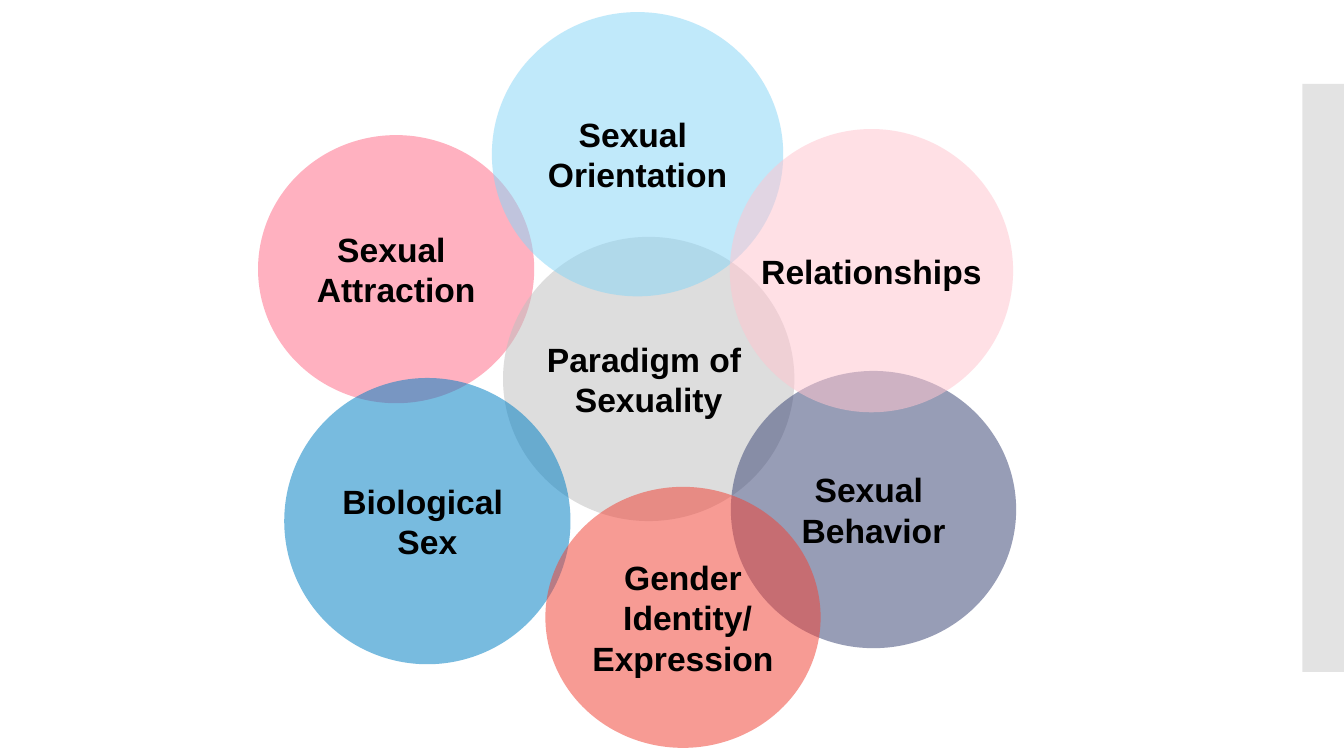
from lxml.etree import SubElement
from pptx import Presentation
from pptx.dml.color import RGBColor
from pptx.enum.shapes import MSO_SHAPE as Shape
from pptx.enum.text import MSO_ANCHOR as Anchor, PP_ALIGN as Align
from pptx.oxml.ns import qn
from pptx.util import Inches, Pt

COLORS = {
    "text": "000000",
    "edge": "C8C8C8",
    "attraction": "FF6D88",
    "paradigm": "BFBFBF",
    "biology": "007FC4",
    "orientation": "89D6F7",
    "behavior": "3C4676",
    "gender": "F04336",
    "relationships": "FFC5CF",
}

# Back to front: colour, (left, top, width, height) in percent of the slide, lines
CIRCLES = [
    ("attraction", (19.2, 17.87, 20.55, 35.47), ["Sexual ", "Attraction"]),
    ("paradigm", (37.43, 31.33, 21.68, 37.6), ["Paradigm of ", "Sexuality"]),
    ("biology", (21.15, 50, 21.3, 37.87), ["Biological ", "Sex"]),
    ("orientation", (36.6, 1.6, 21.68, 37.6), ["Sexual ", "Orientation"]),
    ("behavior", (54.38, 49.07, 21.23, 36.67), ["Sexual ", "Behavior"]),
    ("gender", (40.58, 64.4, 20.48, 34.53), ["Gender", " Identity/", "Expression"]),
    ("relationships", (54.3, 17.07, 21.08, 37.47), ["Relationships"]),
]


class Page:
    """Holds the text style and the current slide; lengths are percentages."""

    font_name = "Arial"
    font_size = Pt(24)

    def __init__(self, deck):
        self.slide = deck.slides.add_slide(deck.slide_layouts[6])
        self.width, self.height = deck.slide_width, deck.slide_height

    def panel(self, kind, area, color, opacity):
        left, top, width, height = area
        shape = self.slide.shapes.add_shape(
            kind,
            round(self.width * left / 100), round(self.height * top / 100),
            round(self.width * width / 100), round(self.height * height / 100))
        shape.shadow.inherit = False
        shape.line.fill.background()
        shape.fill.solid()
        shape.fill.fore_color.rgb = RGBColor.from_string(COLORS[color])
        # Transparency
        tint = shape.element.spPr.find(qn("a:solidFill"))[0]
        SubElement(tint, qn("a:alpha")).set("val", str(opacity * 1000))
        return shape

    def circle(self, color, area, lines):
        frame = self.panel(Shape.OVAL, area, color, opacity=53).text_frame
        frame.word_wrap = False
        frame.vertical_anchor = Anchor.MIDDLE
        frame.text = "\n".join(lines)
        for para in frame.paragraphs:
            para.alignment = Align.CENTER
            para.font.name = self.font_name
            para.font.size = self.font_size
            para.font.bold = True
            para.font.color.rgb = RGBColor.from_string(COLORS["text"])


def main():
    deck = Presentation()
    deck.slide_width, deck.slide_height = Inches(13.33), Inches(7.5)
    page = Page(deck)

    # Strip on the right edge
    page.panel(Shape.RECTANGLE, (96.9, 11.11, 3.1, 77.78), "edge", opacity=50)

    # Overlapping circles
    for color, area, lines in CIRCLES:
        page.circle(color, area, lines)

    deck.save("out.pptx")


if __name__ == "__main__":
    main()
